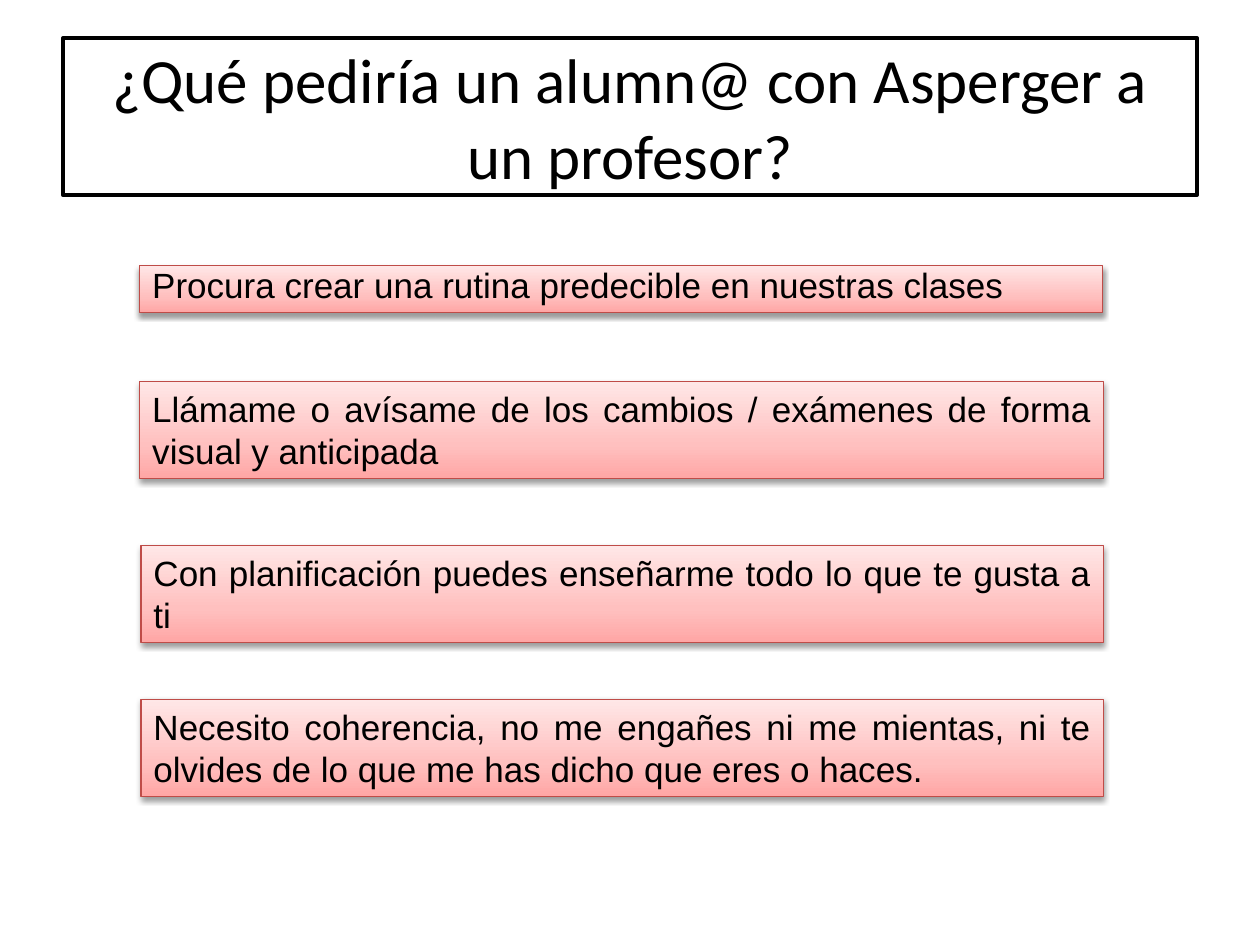
"""Build a slide with four requests from a student with Asperger to a teacher."""
from copy import deepcopy

from pptx import Presentation
from pptx.dml.color import RGBColor
from pptx.enum.shapes import MSO_SHAPE
from pptx.enum.text import MSO_ANCHOR, MSO_AUTO_SIZE, PP_ALIGN
from pptx.oxml import parse_xml
from pptx.oxml.ns import nsdecls, qn
from pptx.util import Inches, Pt

RECT = MSO_SHAPE.RECTANGLE
TOP, MIDDLE = MSO_ANCHOR.TOP, MSO_ANCHOR.MIDDLE
CENTER, JUSTIFY = PP_ALIGN.CENTER, PP_ALIGN.JUSTIFY
GROW = MSO_AUTO_SIZE.SHAPE_TO_FIT_TEXT

STOPS = [(0, "FFA6A5"), (0.35, "FFC0BF"), (1, "FFE7E7")]
SHADOW = (
    f'<a:outerShdw {nsdecls("a")} blurRad="{Pt(3.1)}" dist="{Pt(1.6)}" dir="5400000" '
    'rotWithShape="0"><a:srgbClr val="000000"><a:alpha val="38000"/></a:srgbClr></a:outerShdw>'
)
REQUESTS = [
    (1.11, 2.11, 7.64, 0.37, 0.8, "Procura crear una rutina predecible en nuestras clases"),
    (1.11, 3.03, 7.65, 0.77, None,
     "Llámame o avísame de los cambios / exámenes de forma visual y anticipada"),
    (1.12, 4.33, 7.64, 0.77, None,
     "Con planificación puedes enseñarme todo lo que te gusta a ti "),
    (1.12, 5.55, 7.64, 0.77, None,
     "Necesito coherencia, no me engañes ni me mientas, ni te olvides de lo que me has dicho "
     "que eres o haces. "),
]


def color(value):
    return RGBColor.from_string(value)


def add_box(slide, box, text, font, size, align, anchor, line, width):
    sp = slide.shapes.add_shape(RECT, *[Inches(v) for v in box])
    sp.shadow.inherit = False
    sp.line.color.rgb = color(line)
    sp.line.width = Pt(width)
    tf = sp.text_frame
    tf.word_wrap = True
    tf.vertical_anchor = anchor
    p = tf.paragraphs[0]
    p.alignment = align
    r = p.add_run()
    r.text = text
    r.font.name = font
    r.font.size = Pt(size)
    r.font.color.rgb = color("000000")
    return sp


prs = Presentation()
prs.slide_width, prs.slide_height = Inches(10), Inches(7.5)
s = prs.slides.add_slide(prs.slide_layouts[6])

title = add_box(s, (0.5, 0.3, 9, 1.25), "¿Qué pediría un alumn@ con Asperger a un profesor?",
                "Calibri", 36, CENTER, MIDDLE, "000000", 2)
title.fill.solid()
title.fill.fore_color.rgb = color("FFFFFF")

for left, top, width, height, spacing, text in REQUESTS:
    sp = add_box(s, (left, top, width, height), text, "Arial", 20, JUSTIFY, TOP, "BF4C48", 0.75)
    sp.text_frame.auto_size = GROW
    if spacing:
        sp.text_frame.paragraphs[0].line_spacing = spacing
    sp.fill.gradient()
    sp.fill.gradient_angle = 90
    stop_list = sp.element.spPr.find(".//" + qn("a:gsLst"))
    stop_list.append(deepcopy(stop_list[0]))
    for stop, (position, value) in zip(sp.fill.gradient_stops, STOPS):
        stop.position = position
        stop.color.rgb = color(value)
    sp.element.spPr.find(qn("a:effectLst")).append(parse_xml(SHADOW))

prs.save("out.pptx")
